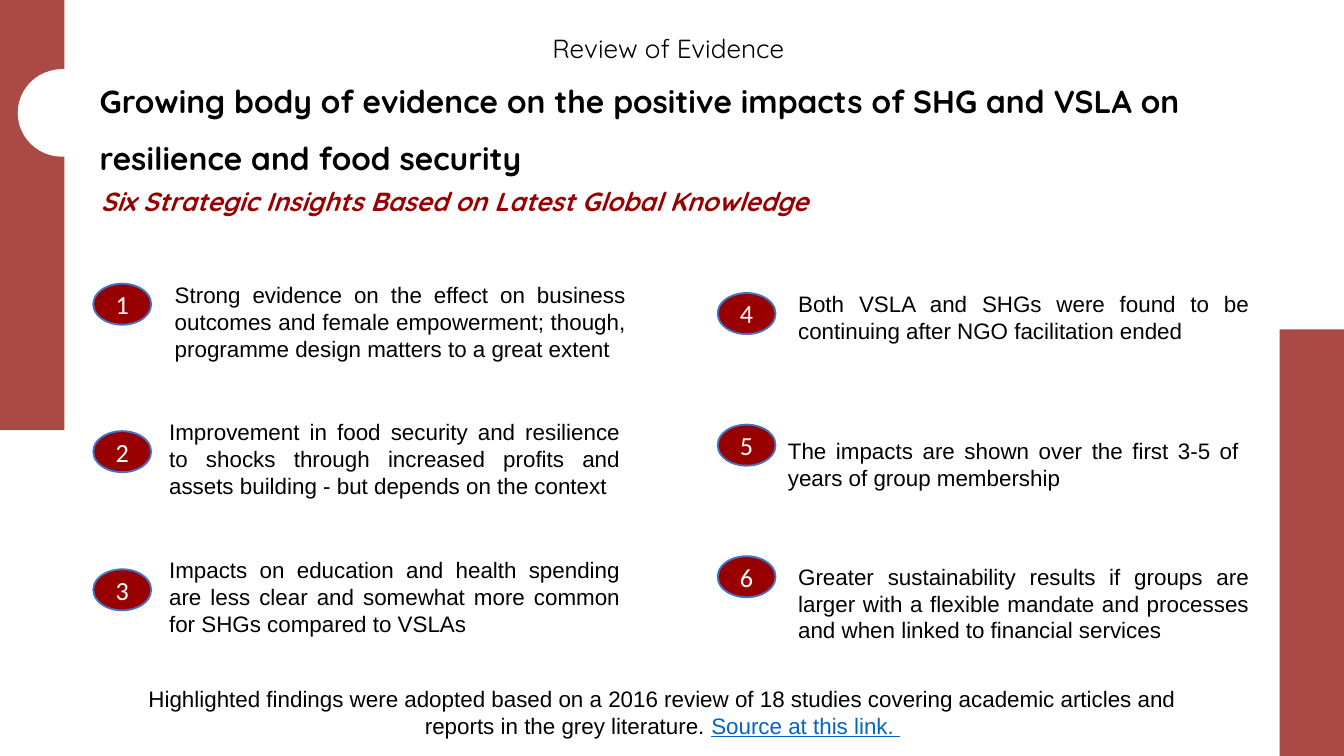
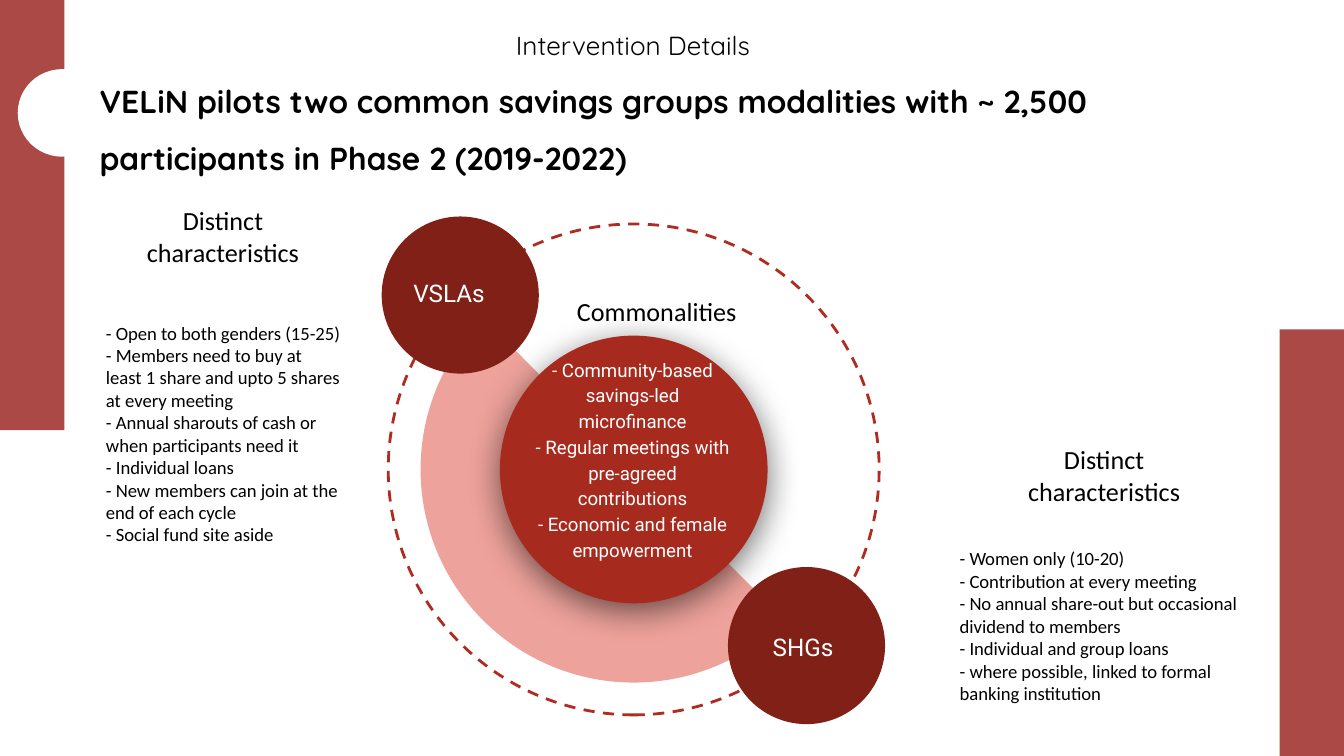
from lxml import etree
from pptx import Presentation
from pptx.dml.color import RGBColor
from pptx.enum.dml import MSO_LINE as Dash
from pptx.enum.shapes import MSO_SHAPE as Kind
from pptx.enum.text import MSO_ANCHOR as Anchor, MSO_AUTO_SIZE as Fit, PP_ALIGN as Align
from pptx.oxml.ns import qn
from pptx.util import Pt

hue = RGBColor.from_string
BLACK, WHITE, BAND, WINE = "000000", "FFFFFF", "AB4946", "980000"
RUST, DARK, PINK = "A72A1E", "802017", "EDA29B"


def draw(slide, kind, box, fill=None, line=None, width=1):
    """Add a preset shape without shadow; box is left, top, width, height."""
    shape = slide.shapes.add_shape(kind, *map(Pt, box))
    shape.shadow.inherit = False
    if fill:
        shape.fill.solid()
        shape.fill.fore_color.rgb = hue(fill)
    else:
        shape.fill.background()
    if line:
        shape.line.color.rgb = hue(line)
        shape.line.width = Pt(width)
    else:
        shape.line.fill.background()
    return shape


def write(shape, lines, font, size, color=BLACK, align=Align.LEFT, anchor=Anchor.TOP,
          pad=(7.2, 7.2), gap=None, bold=False, italic=False):
    """Put one paragraph per line into the shape and return the last one."""
    frame = shape.text_frame
    frame.word_wrap = True
    frame.auto_size = Fit.NONE
    frame.vertical_anchor = anchor
    frame.margin_left = frame.margin_right = Pt(pad[0])
    frame.margin_top = frame.margin_bottom = Pt(pad[1])
    for i, line in enumerate(lines):
        par = frame.add_paragraph() if i else frame.paragraphs[0]
        par.alignment = align
        if gap:
            par.line_spacing = gap
        run = par.add_run()
        run.text = line
        run.font.name, run.font.size = font, Pt(size)
        run.font.bold, run.font.italic = bold, italic
        run.font.color.rgb = hue(color)
    return par


deck = Presentation()
deck.slide_width, deck.slide_height = Pt(720), Pt(405)

# Shared frame: side bands, notch, topic and headline
heads = [
    ("Review of Evidence", (263.5, 6.5),
     "Growing body of evidence on the positive impacts of SHG and VSLA on "
     "resilience and food security"),
    ("Intervention Details", (244, 5),
     "VELiN pilots two common savings groups modalities with ~ 2,500 "
     "participants in Phase 2 (2019-2022)"),
]
for topic, spot, head in heads:
    slide = deck.slides.add_slide(deck.slide_layouts[5])
    draw(slide, Kind.RECTANGLE, (0, 0, 34.5, 230.5), BAND)
    draw(slide, Kind.RECTANGLE, (685.5, 176.5, 34.5, 228.5), BAND)
    draw(slide, Kind.OVAL, (10, 37.5, 47, 46), WHITE, WHITE)
    title = slide.shapes.title
    title.left, title.top, title.width, title.height = map(Pt, (21, 49, 655, 30))
    title.element.getparent().append(title.element)
    label = slide.shapes.add_textbox(*map(Pt, (*spot, 221, 30)))
    for shape, text, size, bold in [(label, topic, 14, False), (title, head, 17, True)]:
        par = write(shape, [text], "Quicksand", size, anchor=Anchor.MIDDLE,
                    pad=(5, 3), gap=1.5, bold=bold)
        par.space_before = Pt(4)
        props = par._p.get_or_add_pPr()
        props.set("marL", str(Pt(27.4)))
        props.set("indent", "0")

review, pilots = deck.slides

# Slide 1: six numbered insights
sub = review.shapes.add_textbox(*map(Pt, (47, 92, 425, 25)))
write(sub, ["Six Strategic Insights Based on Latest Global Knowledge"],
      "Quicksand", 14, WINE, bold=True, italic=True)

# Badge left and top, text left and top, text
facts = [
    (50, 152, 86.5, 147, "Strong evidence on the effect on business outcomes and female "
     "empowerment; though, programme design matters to a great extent"),
    (50, 231, 83.5, 220.5, "Improvement in food security and resilience to shocks through "
     "increased profits and assets building - but depends on the context"),
    (50, 305, 83.5, 294.5, "Impacts on education and health spending are less clear and "
     "somewhat more common for SHGs compared to VSLAs"),
    (384.5, 157, 420.5, 152, "Both VSLA and SHGs were found to be continuing after NGO "
     "facilitation ended"),
    (384.5, 227.5, 415, 230.5, "The impacts are shown over the first 3-5 of years of group "
     "membership"),
    (384.5, 298, 420.5, 298, "Greater sustainability results if groups are larger with a "
     "flexible mandate and processes and when linked to financial services"),
]
for num, (x, y, left, top, fact) in enumerate(facts, 1):
    badge = draw(review, Kind.OVAL, (x, y, 31, 22), WINE, "4472C4")
    write(badge, [str(num)], "Calibri", 14, WHITE, Align.CENTER, Anchor.MIDDLE, (7.2, 3.6))
    note = review.shapes.add_textbox(*map(Pt, (left, top, 256, 36)))
    write(note, [fact], "Arial", 12, align=Align.JUSTIFY, pad=(7.2, 3.6))

foot = review.shapes.add_textbox(*map(Pt, (61, 363.5, 588, 36)))
par = write(foot, ["Highlighted findings were adopted based on a 2016 review of 18 studies "
                   "covering academic articles and reports in the grey literature. "],
            "Arial", 12, align=Align.CENTER, pad=(7.2, 3.6))
link = par.add_run()
link.text = "Source at this link. "
link.font.name, link.font.size, link.font.underline = "Arial", Pt(12), True
link.font.color.rgb = hue("0563C1")

# Slide 2: ring, shared core and the two group types
ring = draw(pilots, Kind.OVAL, (208, 120, 263, 263), None, "B02C20", 1.5)
ring.line.dash_style = Dash.DASH
ring.rotation = 270
wedge = draw(pilots, Kind.PIE, (225.3, 137.3, 228.4, 228.4), PINK)
wedge.adjustments[0], wedge.adjustments[1] = 26.9, 135.11

core = draw(pilots, Kind.OVAL, (267.8, 179.8, 143.4, 143.4), RUST)
glow = etree.SubElement(core.element.spPr.find(qn("a:effectLst")), qn("a:outerShdw"),
                        blurRad=str(Pt(18)), dist=str(Pt(4)), dir="5400000",
                        algn="ctr", rotWithShape="0")
tint = etree.SubElement(glow, qn("a:srgbClr"), val=BLACK)
etree.SubElement(tint, qn("a:alpha"), val="55000")

draw(pilots, Kind.OVAL, (204.5, 116, 84.2, 84.2), DARK)
draw(pilots, Kind.OVAL, (390, 303.8, 84.2, 84.2), DARK)

shared = ["- Community-based savings-led microfinance",
          "- Regular meetings with pre-agreed contributions",
          "- Economic and female empowerment"]
for box, lines, size in [((278, 206.5, 121.7, 78), shared, 10),
                         ((204.5, 124, 72, 63), ["VSLAs"], 13),
                         ((392.4, 312.5, 75.6, 66), ["SHGs"], 13)]:
    note = pilots.shapes.add_textbox(*map(Pt, box))
    write(note, lines, "Roboto", size, WHITE, Align.CENTER, Anchor.MIDDLE, gap=1.15)

vsla = ["- Open to both genders (15-25)",
        "- Members need to buy at least 1 share and upto 5 shares at every meeting",
        "- Annual sharouts of cash or when participants need it",
        "- Individual loans",
        "- New members can join at the end of each cycle",
        "- Social fund site aside"]
shg = ["- Women only (10-20)",
       "- Contribution at every meeting",
       "- No annual share-out but occasional dividend to members",
       "- Individual and group loans",
       "- where possible, linked to formal banking institution"]
for box, lines in [((49.7, 165, 139.9, 17), vsla), ((507, 286, 170, 17), shg)]:
    note = pilots.shapes.add_textbox(*map(Pt, box))
    write(note, lines, "Calibri", 10)

for x, y, text, align in [(53, 102.5, "Distinct characteristics", Align.CENTER),
                          (525, 230.5, "Distinct characteristics", Align.CENTER),
                          (302, 151, "Commonalities", Align.LEFT)]:
    note = pilots.shapes.add_textbox(*map(Pt, (x, y, 133, 25)))
    write(note, [text], "Calibri", 14, align=align)

deck.save("out.pptx")
